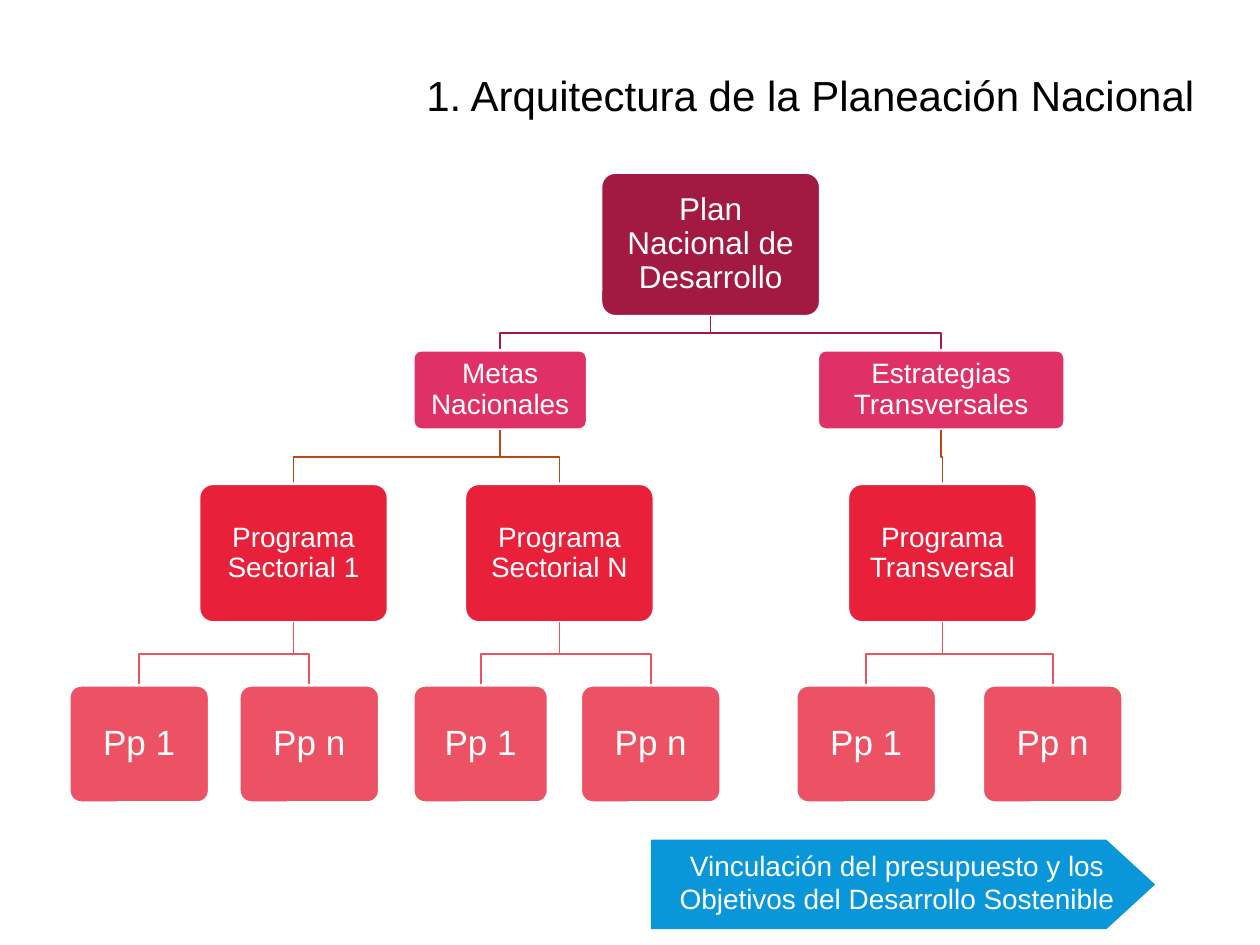
from pptx import Presentation
from pptx.dml.color import RGBColor
from pptx.enum.shapes import MSO_SHAPE as Shape
from pptx.enum.text import MSO_ANCHOR as Anchor, PP_ALIGN as Align
from pptx.util import Inches, Pt

WHITE = RGBColor(0xFF, 0xFF, 0xFF)
BLACK = RGBColor(0x00, 0x00, 0x00)
WINE = RGBColor(0xA2, 0x19, 0x42)
PINK = RGBColor(0xDF, 0x31, 0x67)
RUST = RGBColor(0xB7, 0x48, 0x16)
RED = RGBColor(0xE8, 0x20, 0x3A)
CORAL = RGBColor(0xED, 0x51, 0x64)
BLUE = RGBColor(0x0A, 0x97, 0xD9)

TITLE = "1. Arquitectura de la Planeación Nacional"
BANNER = "Vinculación del presupuesto y los Objetivos del Desarrollo Sostenible"

# Per level: top, height, fill, colour of the line from the parent, text size
LEVELS = [
    (1.37, 1.14, WINE, None, 18),
    (2.78, 0.63, PINK, WINE, 16),
    (3.84, 1.1, RED, RUST, 16),
    (5.44, 0.93, CORAL, CORAL, 20),
]

# Per node: text, left, width, children
TREE = ("Plan Nacional de Desarrollo", 4.77, 1.74, [
    ("Metas Nacionales", 3.28, 1.38, [
        ("Programa Sectorial 1", 1.58, 1.5, [
            ("Pp 1", 0.55, 1.11, []),
            ("Pp n", 1.9, 1.11, []),
        ]),
        ("Programa Sectorial N", 3.69, 1.5, [
            ("Pp 1", 3.28, 1.07, []),
            ("Pp n", 4.61, 1.11, []),
        ]),
    ]),
    ("Estrategias Transversales", 6.49, 1.96, [
        ("Programa Transversal", 6.73, 1.5, [
            ("Pp 1", 6.32, 1.11, []),
            ("Pp n", 7.8, 1.11, []),
        ]),
    ]),
])


def set_text(shape, text, size, color, align, insets, spacing=None):
    frame = shape.text_frame
    frame.text = text
    frame.word_wrap = True
    frame.vertical_anchor = Anchor.MIDDLE
    (frame.margin_left, frame.margin_top,
     frame.margin_right, frame.margin_bottom) = map(Inches, insets)
    para = frame.paragraphs[0]
    para.alignment = align
    para.line_spacing = spacing
    para.font.name = "Arial"
    para.font.size = Pt(size)
    para.font.color.rgb = color


def add_block(shapes, kind, box, adjust, fill, line, width):
    block = shapes.add_shape(kind, *map(Inches, box))
    block.adjustments[0] = adjust
    block.shadow.inherit = False
    block.fill.solid()
    block.fill.fore_color.rgb = fill
    block.line.color.rgb = line
    block.line.width = Pt(width)
    return block


def add_elbow(shapes, start, end, color):
    """Draw a stepped line: down, across at mid height, down."""
    (x1, y1), (x2, y2) = start, end
    mid = (y1 + y2) / 2
    pen = shapes.build_freeform(Inches(x1), Inches(y1))
    points = [(x1, mid), (x2, mid), (x2, y2)]
    pen.add_line_segments([(Inches(x), Inches(y)) for x, y in points], close=False)
    elbow = pen.convert_to_shape()
    elbow.shadow.inherit = False
    elbow.fill.background()
    elbow.line.color.rgb = color
    elbow.line.width = Pt(1)


def add_node(shapes, node, depth=0, start=None):
    """Draw a node with the line from its parent, then its children."""
    text, left, width, children = node
    top, height, fill, link, size = LEVELS[depth]
    center = left + width / 2
    if start:
        add_elbow(shapes, start, (center, top), link)
    block = add_block(shapes, Shape.ROUNDED_RECTANGLE,
                      (left, top, width, height), 0.1, fill, WHITE, 1.5)
    set_text(block, text, size, WHITE, Align.CENTER, [0.09] * 4, 0.9)
    for child in children:
        add_node(shapes, child, depth + 1, (center, top + height))


def main():
    deck = Presentation()
    deck.slide_width, deck.slide_height = Inches(10), Inches(7.5)
    shapes = deck.slides.add_slide(deck.slide_layouts[5]).shapes

    title = shapes.title
    title.left, title.top = Inches(0.9), Inches(0.18)
    title.width, title.height = Inches(8.68), Inches(1.19)
    set_text(title, TITLE, 24, BLACK, Align.RIGHT, (0.1, 0.05, 0.1, 0.05), 0.9)

    banner = add_block(shapes, Shape.PENTAGON, (5.17, 6.67, 3.99, 0.7),
                       0.545, BLUE, BLUE, 0.75)
    set_text(banner, BANNER, 16, WHITE, Align.CENTER, (0.1, 0.12, 0, 0.16))

    add_node(shapes, TREE)
    deck.save("out.pptx")


if __name__ == "__main__":
    main()
